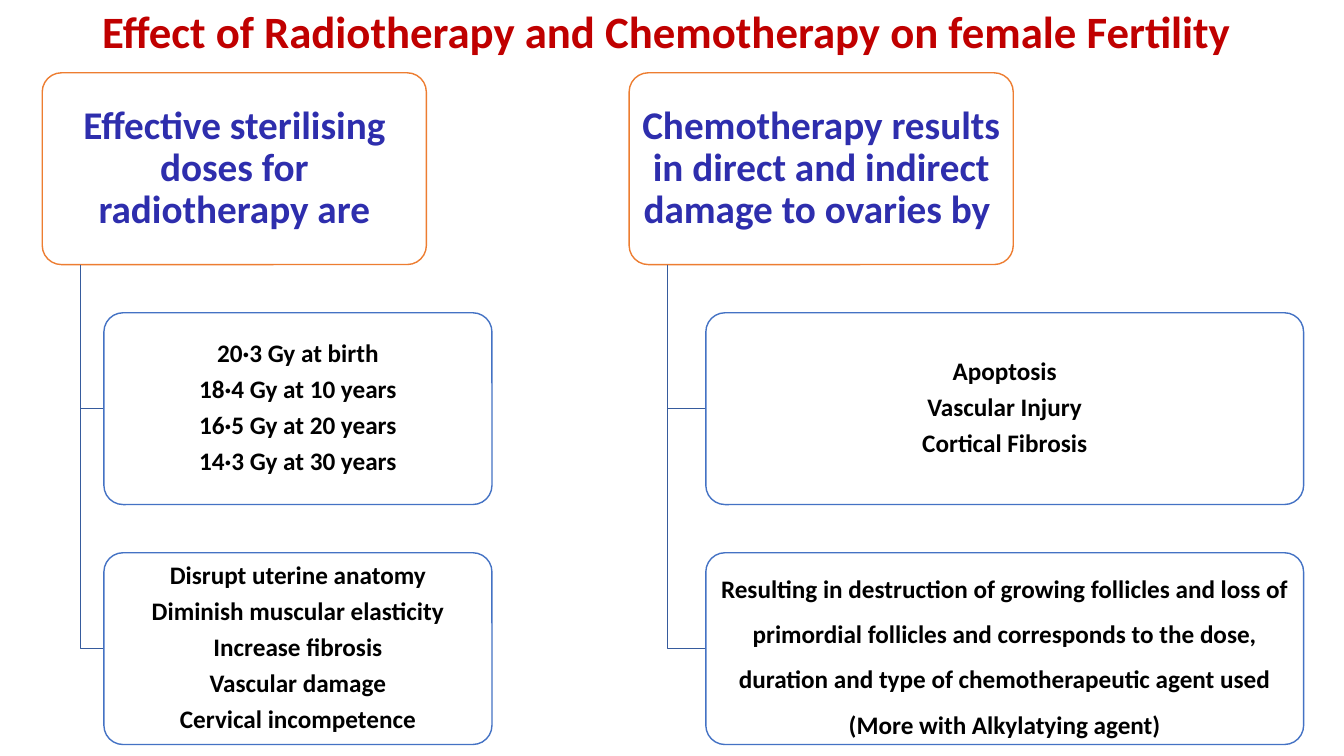
import pptx
import pptx.util
import pptx.dml.color
import pptx.enum.shapes
import pptx.enum.text

Pt = pptx.util.Pt
COLORS = {
    "title": "C00000", "heading": "2E2EAD", "body": "000000", "box": "FFFFFF",
    "heading_line": "ED7D31", "body_line": "4472C4", "branch": "365B9D",
}
BOX_H = 137      # height of every box
PITCH = 171.4    # distance between the tops of stacked boxes
HEAD_W = 274.4
TRUNK_INSET = 27.4

# Each column: left, heading, indent and width of its boxes, (paragraphs, line spacing)
COLUMNS = [
    (30.2, "Effective sterilising doses for radiotherapy are", 44, 277.2, [
        (["20·3 Gy at birth", "18·4 Gy at 10 years", "16·5 Gy at 20 years",
          "14·3 Gy at 30 years"], 0.9),
        (["Disrupt uterine anatomy", "Diminish muscular elasticity", "Increase fibrosis",
          "Vascular damage", "Cervical incompetence"], 0.9),
    ]),
    (449.4, "Chemotherapy results in direct and indirect damage to ovaries by ", 54.8, 427, [
        (["Apoptosis", "Vascular Injury", "Cortical Fibrosis"], 0.9),
        (["Resulting in destruction of growing follicles and loss of primordial follicles "
          "and corresponds to the dose, duration and type of chemotherapeutic agent used "
          "(More with Alkylatying agent)"], 1.5),
    ]),
]


def rgb(name):
    return pptx.dml.color.RGBColor.from_string(COLORS[name])


def write(tf, lines, size, color, spacing=1.0, after=0.0, inset=(7.2, 3.6)):
    """Fill a text frame with bold, centred paragraphs."""
    tf.word_wrap = True
    tf.auto_size = pptx.enum.text.MSO_AUTO_SIZE.NONE
    tf.vertical_anchor = pptx.enum.text.MSO_ANCHOR.MIDDLE
    tf.margin_left = tf.margin_right = Pt(inset[0])
    tf.margin_top = tf.margin_bottom = Pt(inset[1])
    for i, line in enumerate(lines):
        p = tf.add_paragraph() if i else tf.paragraphs[0]
        p.alignment = pptx.enum.text.PP_ALIGN.CENTER
        p.line_spacing = spacing
        p.space_before = Pt(0)
        p.space_after = Pt(after)
        r = p.add_run()
        r.text = line
        r.font.name, r.font.size, r.font.bold = "Calibri", Pt(size), True
        r.font.color.rgb = rgb(color)


def add_title(s, text, x, y, w, h):
    sp = s.shapes.title
    sp.left, sp.top, sp.width, sp.height = Pt(x), Pt(y), Pt(w), Pt(h)
    write(sp.text_frame, [text], 32, "title")


def add_box(s, x, y, w, h, line, lines, **fmt):
    sp = s.shapes.add_shape(pptx.enum.shapes.MSO_SHAPE.ROUNDED_RECTANGLE,
                            Pt(x), Pt(y), Pt(w), Pt(h))
    sp.adjustments[0] = 0.1
    sp.shadow.inherit = False
    sp.fill.solid()
    sp.fill.fore_color.rgb = rgb("box")
    sp.line.color.rgb = rgb(line)
    sp.line.width = Pt(1)
    write(sp.text_frame, lines, **fmt)


def add_branch(s, x, y, w, h):
    """Draw an elbow going down, then right."""
    builder = s.shapes.build_freeform(Pt(x), Pt(y))
    builder.add_line_segments([(Pt(x), Pt(y + h)), (Pt(x + w), Pt(y + h))], close=False)
    sp = builder.convert_to_shape()
    sp.shadow.inherit = False
    sp.fill.background()
    sp.line.color.rgb = rgb("branch")
    sp.line.width = Pt(1)


def add_column(s, x, y, heading, indent, width, boxes):
    # Heading
    add_box(s, x, y, HEAD_W, BOX_H, "heading_line", [heading], size=28,
            color="heading", spacing=0.9, after=9.8, inset=(4.2, 2.8))
    # Boxes below, each joined to the heading
    for row, (lines, spacing) in enumerate(boxes, 1):
        add_branch(s, x + TRUNK_INSET, y + BOX_H, indent - TRUNK_INSET,
                   row * PITCH - BOX_H / 2)
        add_box(s, x + indent, y + row * PITCH, width, BOX_H, "body_line", lines,
                size=18, color="body", spacing=spacing, after=6.3, inset=(2.7, 1.8))


def main():
    prs = pptx.Presentation()
    prs.slide_width, prs.slide_height = Pt(960), Pt(540)
    s = prs.slides.add_slide(prs.slide_layouts[5])
    add_title(s, "Effect of Radiotherapy and Chemotherapy on female Fertility ",
              0, -1.4, 960, 46)
    for x, heading, indent, width, boxes in COLUMNS:
        add_column(s, x, 52, heading, indent, width, boxes)
    prs.save("out.pptx")


if __name__ == "__main__":
    main()
